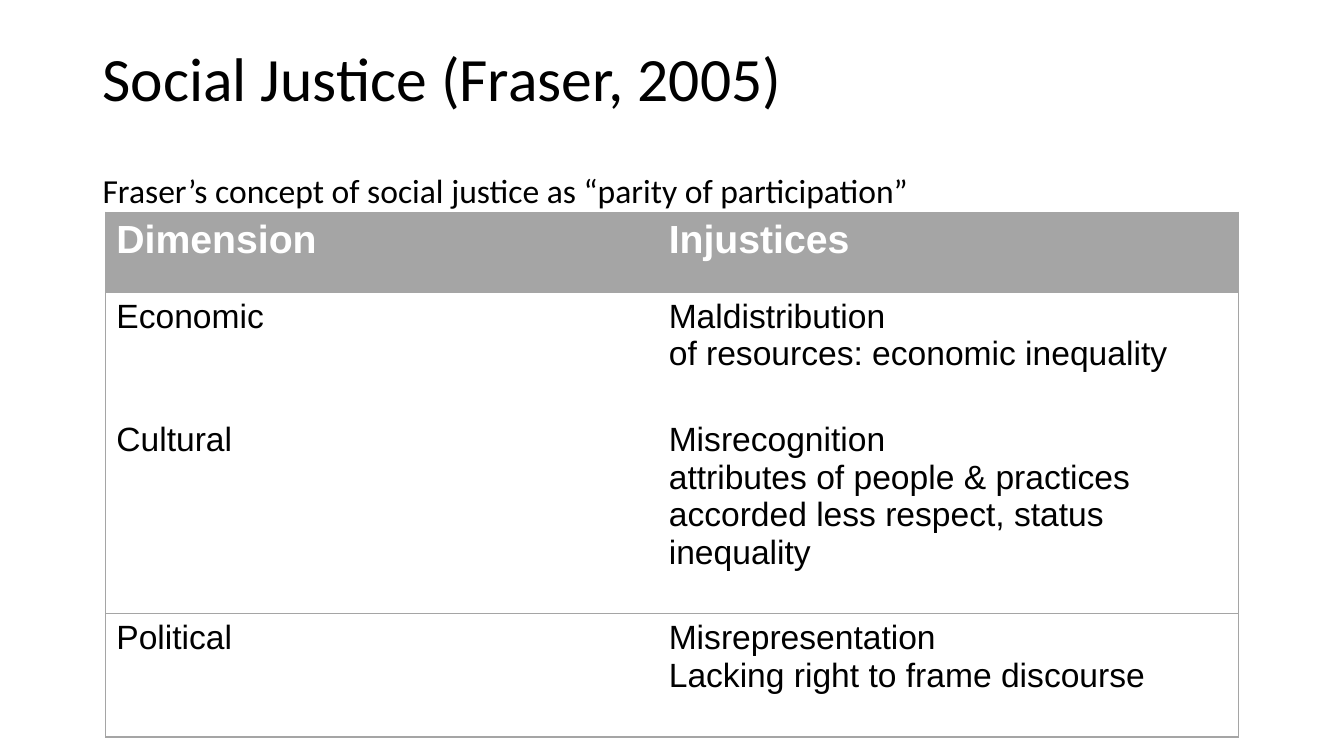
"""Build a slide with a table of Fraser's dimensions of social justice."""
from lxml import etree
from pptx import Presentation
from pptx.dml.color import RGBColor
from pptx.enum.text import MSO_ANCHOR
from pptx.oxml.ns import qn
from pptx.util import Cm, Pt

TOP = MSO_ANCHOR.TOP
COLORS = {"grey": "A5A5A5", "black": "000000", "white": "FFFFFF"}
HEADING_FORMAT = {"name": "Calibri", "size": Pt(33), "bold": False}
SUBTITLE_FORMAT = {"name": "Calibri", "size": Pt(18), "bold": False}
HEADER_FORMAT = {"name": "Arial", "size": Pt(21), "bold": True}
BODY_FORMAT = {"name": "Arial", "size": Pt(18), "bold": False}
COLUMN_WIDTHS = [10.44, 10.96]
ROW_HEIGHTS = [1.51, 2.33, 3.74, 2.33]
ROWS = [
    ["Dimension", "Injustices"],
    ["Economic", "Maldistribution\nof resources: economic inequality"],
    ["Cultural", "Misrecognition\nattributes of people & practices accorded less respect, status inequality"],
    ["Political", "Misrepresentation\nLacking right to frame discourse"],
]


def write_text(text_frame, text, formats, color):
    text_frame.text = text
    for paragraph, format_values in zip(text_frame.paragraphs, formats):
        font = paragraph.runs[0].font
        for attribute, value in format_values.items():
            setattr(font, attribute, value)
        font.color.rgb = RGBColor.from_string(COLORS[color])


def set_border(cell, side, visible):
    properties = cell._tc.get_or_add_tcPr()
    line = etree.SubElement(properties, qn(f"a:ln{side}"), w=str(Pt(0.75)))
    if visible:
        fill = etree.SubElement(line, qn("a:solidFill"))
        etree.SubElement(fill, qn("a:srgbClr"), val=COLORS["grey"])
    else:
        etree.SubElement(line, qn("a:noFill"))


presentation = Presentation()
presentation.slide_width = Cm(25.4)
presentation.slide_height = Cm(14.28)
slide = presentation.slides.add_slide(presentation.slide_layouts[6])

title = slide.shapes.add_textbox(Cm(1.75), Cm(0.81), Cm(21.9), Cm(3.2))
title_frame = title.text_frame
title_settings = {
    "word_wrap": True, "vertical_anchor": TOP,
    "margin_left": Cm(0.19), "margin_right": Cm(0.19),
    "margin_top": Cm(0.1), "margin_bottom": Cm(0.1),
}
for attribute, value in title_settings.items():
    setattr(title_frame, attribute, value)
write_text(
    title_frame,
    "Social Justice (Fraser, 2005)\nFraser’s concept of social justice as “parity of participation”",
    [HEADING_FORMAT, SUBTITLE_FORMAT],
    "black",
)
for paragraph in title_frame.paragraphs:
    paragraph.line_spacing = 0.9
title_frame.paragraphs[0].space_after = Pt(32)

table_frame = slide.shapes.add_table(
    len(ROWS), len(COLUMN_WIDTHS), Cm(2), Cm(4.01), Cm(sum(COLUMN_WIDTHS)), Cm(sum(ROW_HEIGHTS))
)
table = table_frame.table
table.horz_banding = False
for column, width in zip(table.columns, COLUMN_WIDTHS):
    column.width = Cm(width)
for row, height in zip(table.rows, ROW_HEIGHTS):
    row.height = Cm(height)

last_row = len(ROWS) - 1
last_column = len(COLUMN_WIDTHS) - 1
cell_settings = {
    "vertical_anchor": TOP, "margin_left": Cm(0.2), "margin_right": Cm(0.2),
    "margin_top": Cm(0.1), "margin_bottom": Cm(0.1),
}
for row_index, texts in enumerate(ROWS):
    is_header = row_index == 0
    for column_index, text in enumerate(texts):
        cell = table.cell(row_index, column_index)
        for attribute, value in cell_settings.items():
            setattr(cell, attribute, value)
        cell_format = HEADER_FORMAT if is_header else BODY_FORMAT
        write_text(cell.text_frame, text, [cell_format] * 2, "white" if is_header else "black")
        borders = {
            "L": column_index == 0,
            "R": column_index == last_column,
            "T": row_index != 2,
            "B": row_index != 1,
        }
        for side, visible in borders.items():
            set_border(cell, side, visible)
        if is_header:
            cell.fill.solid()
            cell.fill.fore_color.rgb = RGBColor.from_string(COLORS["grey"])
        else:
            cell.fill.background()

presentation.save("out.pptx")
